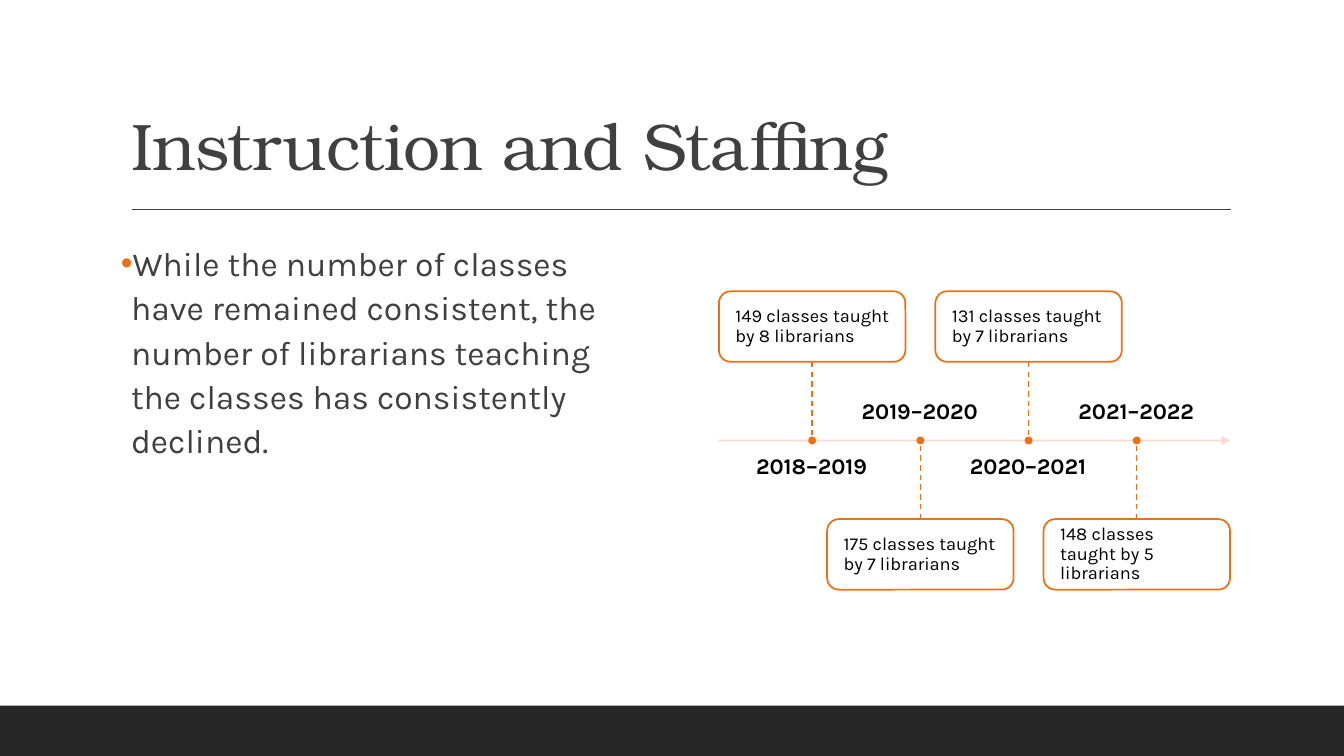
from lxml import etree
from pptx import Presentation
from pptx import util as u
from pptx.dml.color import RGBColor
from pptx.enum import dml, shapes, text
from pptx.oxml import ns

PX = 9144
SLIDE_WIDTH, SLIDE_HEIGHT = 1333, 750
ORANGE, PALE, GREY, DARK, BLACK, WHITE = "EC7016", "F8D5CC", "404040", "262626", "000000", "FFFFFF"
BODY_FONT, TITLE_FONT = "Karla", "TeX Gyre Bonum"
PERIODS = [
    ("2018–2019", "149 classes taught by 8 librarians"),
    ("2019–2020", "175 classes taught by 7 librarians"),
    ("2020–2021", "131 classes taught by 7 librarians"),
    ("2021–2022", "148 classes taught by 5 librarians"),
]


def px(*lengths):
    return [u.Emu(round(length * PX)) for length in lengths]


def colour(value):
    return RGBColor.from_string(value)


def child(parent, tag, **attributes):
    return etree.SubElement(parent, ns.qn(tag), attributes)


def set_frame(shape, anchor, inset_x, inset_y):
    frame = shape.text_frame
    frame.word_wrap = True
    frame.auto_size = text.MSO_AUTO_SIZE.NONE
    frame.vertical_anchor = anchor
    frame.margin_left = frame.margin_right = px(inset_x)[0]
    frame.margin_top = frame.margin_bottom = px(inset_y)[0]
    return frame.paragraphs[0]


def add_run(para, words, size, font, ink, bold=False):
    span = para.add_run()
    span.text = words
    span.font.size = u.Pt(size)
    span.font.name = font
    span.font.bold = bold
    span.font.color.rgb = colour(ink)
    return span


def add_block(page, kind, box, fill, line=None):
    block = page.shapes.add_shape(kind, *px(*box))
    block.shadow.inherit = False
    block.fill.solid()
    block.fill.fore_color.rgb = colour(fill)
    if line:
        block.line.color.rgb = colour(line)
        block.line.width = u.Pt(1.25)
    else:
        block.line.fill.background()
    return block


def add_line(page, ends, ink, width):
    line = page.shapes.add_connector(shapes.MSO_CONNECTOR.STRAIGHT, *px(*ends))
    line.line.color.rgb = colour(ink)
    line.line.width = u.Pt(width)
    child(line._element.spPr, "a:effectLst")
    return line


def place(shape, box):
    shape.left, shape.top, shape.width, shape.height = px(*box)


def fill_title(page, box):
    title = page.shapes.title
    place(title, box)
    para = set_frame(title, text.MSO_ANCHOR.BOTTOM, 10, 5)
    para.alignment = text.PP_ALIGN.LEFT
    para.line_spacing = 0.9
    span = add_run(para, "Instruction and Staffing", 47, TITLE_FONT, GREY)
    span.font._element.set("spc", "-50")


def fill_body(page, box):
    body = page.placeholders[1]
    place(body, box)
    para = set_frame(body, text.MSO_ANCHOR.TOP, 0, 5)
    para.line_spacing = 1.1
    para.space_before, para.space_after = u.Pt(12), u.Pt(2)
    props = para._p.get_or_add_pPr()
    props.set("marL", str(10 * PX))
    props.set("indent", str(-10 * PX))
    child(child(props, "a:buClr"), "a:srgbClr", val=ORANGE)
    child(props, "a:buChar", char="•")
    add_run(para, "While the number of classes have remained consistent, the number of "
            "librarians teaching the classes has consistently declined.", 24, BODY_FONT, GREY)


def add_period(page, box, axis, above, period, note):
    left, top, width, height = box
    middle = left + width / 2
    card = add_block(page, shapes.MSO_SHAPE.ROUNDED_RECTANGLE, box, WHITE, ORANGE)
    para = set_frame(card, text.MSO_ANCHOR.MIDDLE, 13, 13)
    para.alignment = text.PP_ALIGN.LEFT
    para.line_spacing = 0.9
    add_run(para, note, 13, BODY_FONT, BLACK)

    edge = top + height if above else top
    stem = add_line(page, (middle, edge, middle, axis), ORANGE, 1)
    stem.begin_connect(card, 2 if above else 0)
    stem.line.dash_style = dml.MSO_LINE.DASH

    label_top = axis + 15 if above else axis - 62
    label = page.shapes.add_textbox(*px(middle - 82, label_top, 163, 46))
    anchor = text.MSO_ANCHOR.TOP if above else text.MSO_ANCHOR.BOTTOM
    para = set_frame(label, anchor, 0, 0)
    para.alignment = text.PP_ALIGN.CENTER
    para.line_spacing = 0.9
    add_run(para, period, 16, BODY_FONT, BLACK, bold=True)
    add_block(page, shapes.MSO_SHAPE.OVAL, (middle - 3, axis - 3, 6, 6), ORANGE, ORANGE)


def add_timeline(page, box):
    left, top, width, height = box
    card_width, card_height = 185, 70
    axis = top + height // 2
    step = (width - card_width) / (len(PERIODS) - 1)
    arrow = add_line(page, (left, axis, left + width, axis), PALE, 1.25)
    outline = arrow.line._get_or_add_ln()
    child(outline.find(".//" + ns.qn("a:srgbClr")), "a:alpha", val="90000")
    child(outline, "a:tailEnd", type="triangle")
    for index, (period, note) in enumerate(PERIODS):
        above = index % 2 == 0
        card_top = top if above else top + height - card_height
        card = (left + index * step, card_top, card_width, card_height)
        add_period(page, card, axis, above, period, note)


def add_backdrop(page, box):
    left, top, width, height = box
    add_block(page, shapes.MSO_SHAPE.RECTANGLE, (left, top + height - 50, width, 50), DARK)
    add_line(page, (left + 131, top + 208, left + 1221, top + 208), GREY, 1)


def main():
    deck = Presentation()
    deck.slide_width, deck.slide_height = u.Inches(13.33), u.Inches(7.5)
    page = deck.slides.add_slide(deck.slide_layouts[1])
    add_backdrop(page, (0, 0, SLIDE_WIDTH, SLIDE_HEIGHT))
    fill_title(page, (120, 29, 1100, 159))
    fill_body(page, (120, 232, 507, 410))
    add_timeline(page, (713, 289, 507, 296))
    deck.save("out.pptx")


if __name__ == "__main__":
    main()
